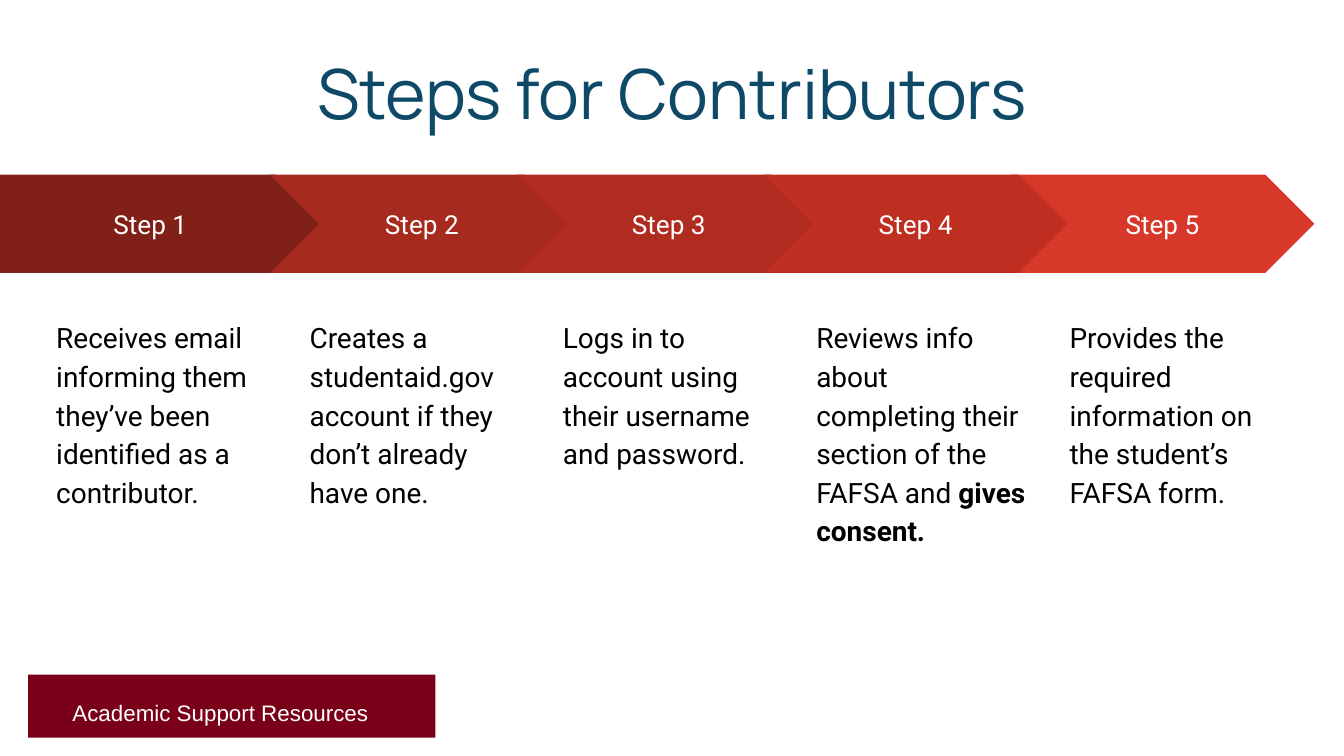
"""Build the Steps for Contributors slide with five arrow steps."""
import pptx
import pptx.dml.color
import pptx.enum.shapes
import pptx.enum.text
import pptx.util

Inches = pptx.util.Inches
RGBColor = pptx.dml.color.RGBColor
MSO_SHAPE = pptx.enum.shapes.MSO_SHAPE
PP_ALIGN = pptx.enum.text.PP_ALIGN
MSO_ANCHOR = pptx.enum.text.MSO_ANCHOR

WHITE = RGBColor(0xFF, 0xFF, 0xFF)
BLACK = RGBColor(0x00, 0x00, 0x00)
NAVY = RGBColor(0x0E, 0x49, 0x68)
MAROON = RGBColor(0x7A, 0x00, 0x19)
STEP_1_RED = RGBColor(0x80, 0x20, 0x17)
STEP_2_RED = RGBColor(0xA7, 0x2A, 0x1E)
STEP_3_RED = RGBColor(0xB0, 0x2C, 0x20)
STEP_4_RED = RGBColor(0xBE, 0x2F, 0x22)
STEP_5_RED = RGBColor(0xD8, 0x38, 0x29)

TITLE = {"size": 37, "name": "Manrope", "color": NAVY}
LABEL = {"size": 14, "name": "Roboto", "color": WHITE}
BODY = {"size": 15, "name": "Roboto", "color": BLACK}
FOOTER = {"size": 12, "name": "Arial", "color": WHITE}

STEPS = [
    (1, STEP_1_RED, ["Receives email informing them they’ve been identified as a contributor."]),
    (2, STEP_2_RED, ["Creates a studentaid.gov account if they don’t already have one."]),
    (3, STEP_3_RED, ["Logs in to account using their username and password."]),
    (5, STEP_5_RED, ["Provides the required information on the student’s FAFSA form."]),
    (4, STEP_4_RED, ["Reviews info about completing their section of the FAFSA and ", "gives consent."]),
]
CHEVRON_PITCH = (7.52 - 2.01) / 3
BODY_PITCH = (7.86 - 0.32) / 4


def add_block(kind, left, top, width, height, fill):
    box = [Inches(value) for value in (left, top, width, height)]
    if kind is None:
        return slide.shapes.add_textbox(*box)
    shape = slide.shapes.add_shape(kind, *box)
    shape.shadow.inherit = False
    shape.fill.solid()
    shape.fill.fore_color.rgb = fill
    shape.line.fill.background()
    return shape


def write(shape, texts, style, alignment, anchor, spacing=1.0):
    frame = shape.text_frame
    frame.word_wrap = True
    frame.vertical_anchor = anchor
    for side in ("left", "top", "right", "bottom"):
        setattr(frame, f"margin_{side}", Inches(0.1))
    paragraph = frame.paragraphs[0]
    paragraph.alignment = alignment
    paragraph.line_spacing = spacing
    for index, text in enumerate(texts):
        run = paragraph.add_run()
        run.text = text
        run.font.color.rgb = style["color"]
        formats = {"size": pptx.util.Pt(style["size"]), "name": style["name"], "bold": index > 0}
        for name, value in formats.items():
            setattr(run.font, name, value)


presentation = pptx.Presentation()
presentation.slide_width = Inches(10)
presentation.slide_height = Inches(10 * 9 / 16)
slide = presentation.slides.add_slide(presentation.slide_layouts[6])

add_block(MSO_SHAPE.RECTANGLE, 0.21, 5.02, 3.03, 0.47, MAROON)
footer = add_block(None, 0.44, 5.1, 3.01, 0.32, None)
write(footer, ["Academic Support Resources"], FOOTER, PP_ALIGN.LEFT, MSO_ANCHOR.TOP)

title = add_block(None, 0.34, 0.37, 9.32, 0.63, None)
write(title, ["Steps for Contributors"], TITLE, PP_ALIGN.CENTER, MSO_ANCHOR.MIDDLE)

for number, color, texts in STEPS:
    if number == 1:
        arrow = add_block(MSO_SHAPE.PENTAGON, 0, 1.3, 2.42, 0.73, color)
    else:
        left = 2.01 + CHEVRON_PITCH * (number - 2)
        arrow = add_block(MSO_SHAPE.CHEVRON, left, 1.3, 2.26, 0.73, color)
    arrow.adjustments[0] = 0.5
    write(arrow, [f"Step {number}"], LABEL, PP_ALIGN.CENTER, MSO_ANCHOR.MIDDLE)

    description = add_block(None, 0.32 + BODY_PITCH * (number - 1), 2.25, 1.78, 2.57, None)
    write(description, texts, BODY, PP_ALIGN.LEFT, MSO_ANCHOR.TOP, 1.15)

presentation.save("out.pptx")
